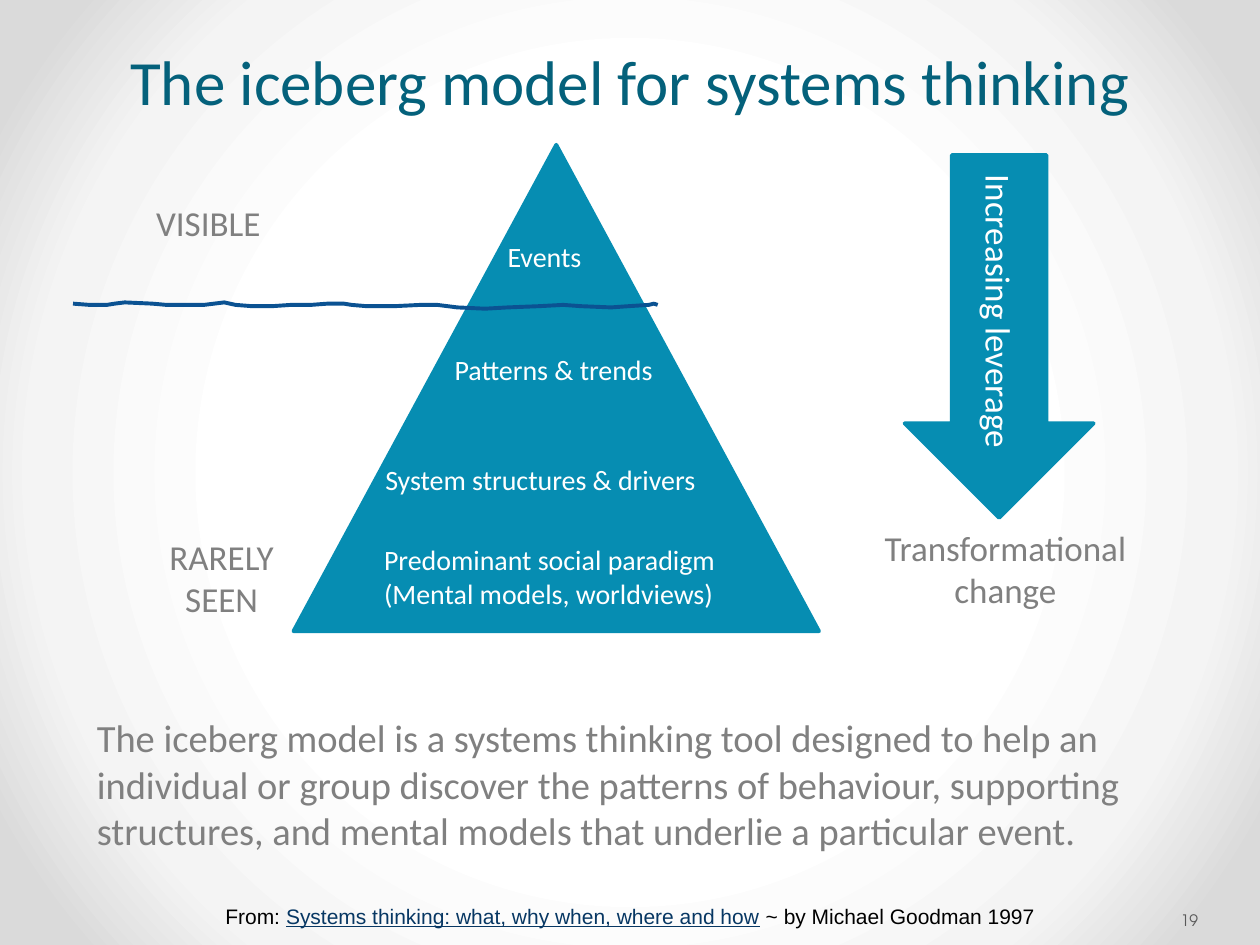
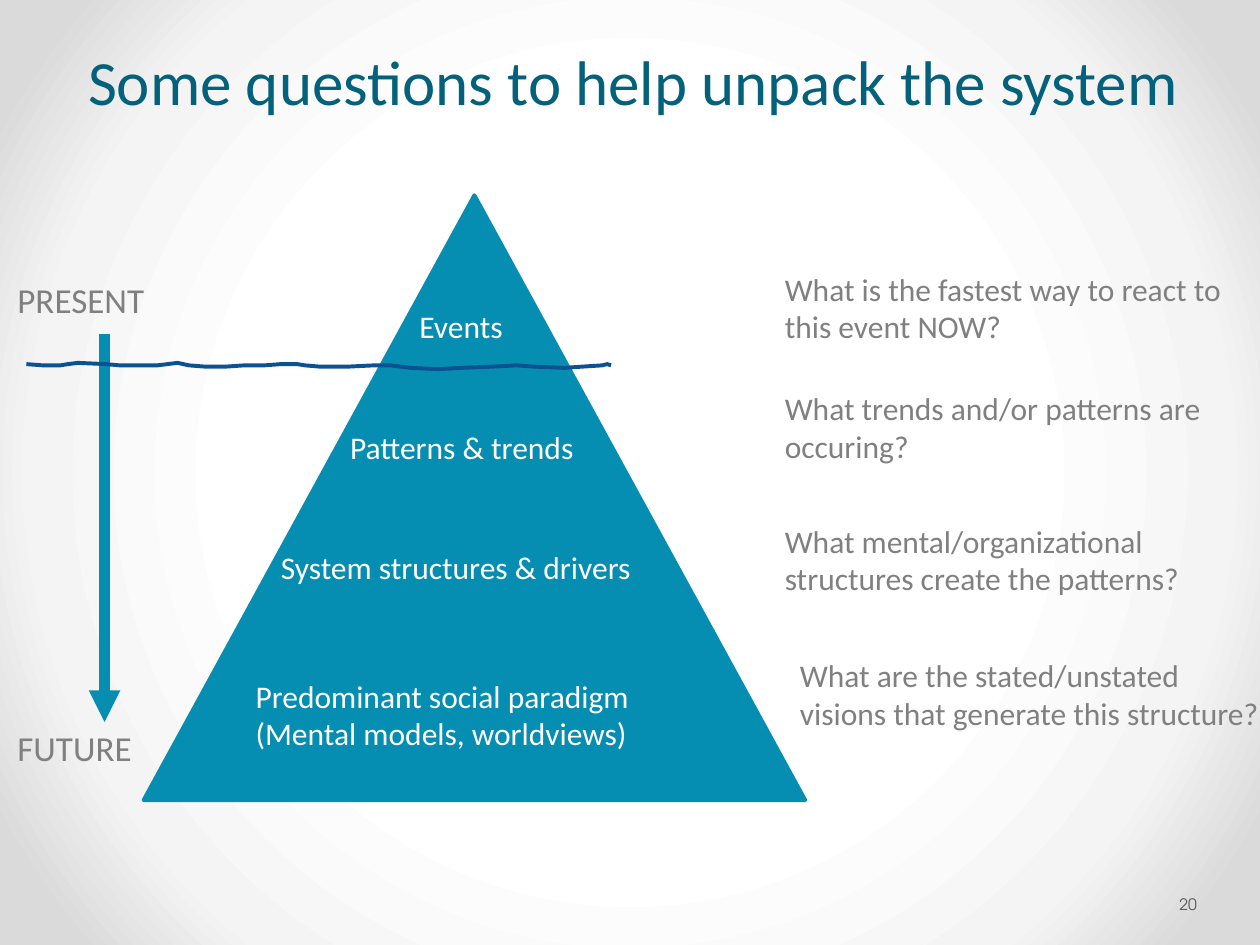
"""Builds two slides on the iceberg model for systems thinking."""
from lxml import etree
from pptx import Presentation
from pptx.dml.color import RGBColor
from pptx.enum.shapes import MSO_CONNECTOR, MSO_SHAPE
from pptx.enum.text import MSO_ANCHOR, PP_ALIGN
from pptx.oxml.ns import qn
from pptx.util import Inches, Pt

LEFT, CENTER = PP_ALIGN.LEFT, PP_ALIGN.CENTER
TOP, MIDDLE, BOTTOM = MSO_ANCHOR.TOP, MSO_ANCHOR.MIDDLE, MSO_ANCHOR.BOTTOM
TRIANGLE, ARROW = MSO_SHAPE.ISOSCELES_TRIANGLE, MSO_SHAPE.DOWN_ARROW
STRAIGHT = MSO_CONNECTOR.STRAIGHT

TEAL, NAVY, INK = "068DB2", "0B5292", "04617B"
WHITE, GREY, DARK, BLACK, LINK = "FFFFFF", "808080", "595959", "000000", "073763"
GLOW = [(50, "FFFFFF"), (76, "F4F4F4"), (92, "DADADA")]
WAVE = [(0.13, 0.02), (0.27, 0.02), (0.33, 0.01), (0.41, 0), (0.63, 0.01),
        (0.74, 0.02), (1.04, 0.02), (1.2, 0), (1.29, 0.02), (1.42, 0.03),
        (1.58, 0.03), (1.73, 0.02), (1.89, 0.02), (2.02, 0.01), (2.15, 0.01),
        (2.21, 0.02), (2.33, 0.03), (2.55, 0.03), (2.76, 0.02), (2.89, 0.02),
        (3.05, 0.04), (3.27, 0.05), (3.45, 0.04), (3.7, 0.03), (3.89, 0.02),
        (4.03, 0.03), (4.27, 0.04), (4.41, 0.03), (4.57, 0.02), (4.61, 0.01),
        (4.64, 0.02)]

LEVELS = ["Events", "Patterns & trends", "System structures & drivers",
          "Predominant social paradigm\n(Mental models, worldviews)"]
ICEBERG = {
    "title": ("The iceberg model for systems thinking", (0.5, 0, 9, 0.99)),
    "page": ("19", (9.34, 7.1, 0.61, 0.4)),
    "berg": (2.33, 1.15, 4.17, 3.86),
    "wave": (0.58, 2.4),
    "size": 16,
    "spots": [(3.93, 1.85, 1.1, 0.37), (3.51, 2.75, 2.09, 0.37),
              (2.96, 3.62, 3.54, 0.37), (2.95, 4.26, 4.33, 0.64)],
    "notes": [
        ("Transformational change", (6.63, 4.13, 2.7, 0.77), 20, CENTER),
        ("VISIBLE", (1.14, 1.55, 1.5, 0.44), 20, LEFT),
        ("RARELY SEEN", (1.01, 4.2, 1.5, 0.77), 20, CENTER),
        ("The iceberg model is a systems thinking tool designed to help an "
         "individual or group discover the patterns of behaviour, supporting "
         "structures, and mental models that underlie a particular event.",
         (0.67, 5.62, 9.18, 1.58), 22, LEFT)],
}
UNPACK = {
    "title": ("Some questions to help unpack the system", (0.17, 0.13, 9.71, 0.86)),
    "page": ("20", (9.33, 6.98, 0.61, 0.4)),
    "berg": (1.14, 1.55, 5.25, 4.8),
    "wave": (0.21, 2.88),
    "size": 18,
    "spots": [(3.23, 2.39, 1.1, 0.4), (2.68, 3.35, 2.83, 0.4),
              (2.13, 4.3, 3.29, 0.4), (1.93, 5.32, 3.49, 0.71)],
    "notes": [
        ("What is the fastest way to react to this event NOW?",
         (6.13, 2.09, 3.88, 0.71), 18, LEFT),
        ("What trends and/or patterns are occuring?",
         (6.13, 3.04, 3.88, 0.71), 18, LEFT),
        ("What mental/organizational structures create the patterns?",
         (6.13, 4.09, 3.88, 0.71), 18, LEFT),
        ("What are the stated/unstated visions that generate this structure?",
         (6.25, 5.16, 3.88, 1.01), 18, LEFT),
        ("PRESENT", (0.04, 2.16, 1.67, 0.44), 20, LEFT),
        ("FUTURE", (0.04, 5.72, 1.67, 0.44), 20, LEFT)],
}
SOURCE = [("From: ", BLACK, False),
          ("Systems thinking: what, why when, where and how", LINK, True),
          (" ~ by Michael Goodman 1997", BLACK, False)]


def rgb(code):
    return RGBColor.from_string(code)


def inch(nums):
    return [Inches(n) for n in nums]


def write(slide, text, box, size=18, color=GREY, font="Calibri", align=LEFT,
          anchor=TOP, turn=0, space=None, pads=(0.1, 0.05, 0.1, 0.05)):
    shape = slide.shapes.add_textbox(*inch(box))
    shape.rotation = turn
    frame = shape.text_frame
    frame.word_wrap = True
    frame.vertical_anchor = anchor
    (frame.margin_left, frame.margin_top,
     frame.margin_right, frame.margin_bottom) = inch(pads)
    lines = text.split("\n") if isinstance(text, str) else [text]
    for i, line in enumerate(lines):
        para = frame.add_paragraph() if i else frame.paragraphs[0]
        para.alignment = align
        if space:
            para.line_spacing = Pt(space)
        runs = [(line, color, False)] if isinstance(line, str) else line
        for words, tint, under in runs:
            run = para.add_run()
            run.text = words
            run.font.name, run.font.size = font, Pt(size)
            run.font.color.rgb = rgb(tint)
            if under:
                run.font.underline = True


def solid(slide, kind, box):
    shape = slide.shapes.add_shape(kind, *inch(box))
    shape.shadow.inherit = False
    shape.fill.solid()
    shape.fill.fore_color.rgb = shape.line.color.rgb = rgb(TEAL)
    shape.line.width = Pt(2.25)


def water(slide, left, top):
    pts = [inch((left + x, top + y)) for x, y in WAVE]
    pen = slide.shapes.build_freeform(Inches(left), Inches(top + 0.01))
    pen.add_line_segments(pts, close=False)
    shape = pen.convert_to_shape()
    shape.shadow.inherit = False
    shape.fill.background()
    shape.line.color.rgb = rgb(NAVY)
    shape.line.width = Pt(2.25)


def arrow(slide, start, end):
    link = slide.shapes.add_connector(STRAIGHT, *inch(start + end))
    link.line.color.rgb = rgb(TEAL)
    link.line.width = Pt(6)
    etree.SubElement(link.line._get_or_add_ln(), qn("a:tailEnd"), type="triangle")
    etree.SubElement(link._element.spPr, qn("a:effectLst"))


def glow(slide):
    fill = slide.background.fill
    fill.gradient()
    grad = slide._element.find(".//" + qn("a:gradFill"))
    for part in list(grad):
        grad.remove(part)
    stops = etree.SubElement(grad, qn("a:gsLst"))
    for pos, code in GLOW:
        stop = etree.SubElement(stops, qn("a:gs"), pos=str(pos * 1000))
        etree.SubElement(stop, qn("a:srgbClr"), val=code)
    path = etree.SubElement(grad, qn("a:path"), path="circle")
    etree.SubElement(path, qn("a:fillToRect"), {side: "50000" for side in "ltrb"})


def base(deck, data):
    slide = deck.slides.add_slide(deck.slide_layouts[6])
    glow(slide)
    write(slide, *data["title"], size=36, color=INK, align=CENTER,
          anchor=BOTTOM, space=43.5)
    write(slide, *data["page"], size=9, color=DARK, font="TeX Gyre Adventor",
          anchor=MIDDLE, pads=(0.03, 0.05, 0.05, 0.05))
    solid(slide, TRIANGLE, data["berg"])
    for text, box in zip(LEVELS, data["spots"]):
        write(slide, text, box, size=data["size"], color=WHITE)
    for text, box, size, align in data["notes"]:
        write(slide, text, box, size=size, align=align)
    return slide


def main():
    deck = Presentation()
    deck.slide_width, deck.slide_height = inch((10, 7.5))

    slide = base(deck, ICEBERG)
    water(slide, *ICEBERG["wave"])
    solid(slide, ARROW, (7.18, 1.23, 1.5, 2.88))
    write(slide, "Increasing leverage", (6.58, 2.42, 2.7, 0.44), size=20,
          color=WHITE, turn=90)
    write(slide, SOURCE, (1.69, 7.12, 8.98, 0.3), size=12, font="Arial")

    slide = base(deck, UNPACK)
    arrow(slide, (0.83, 2.65), (0.83, 5.73))
    water(slide, *UNPACK["wave"])

    deck.save("out.pptx")


if __name__ == "__main__":
    main()
